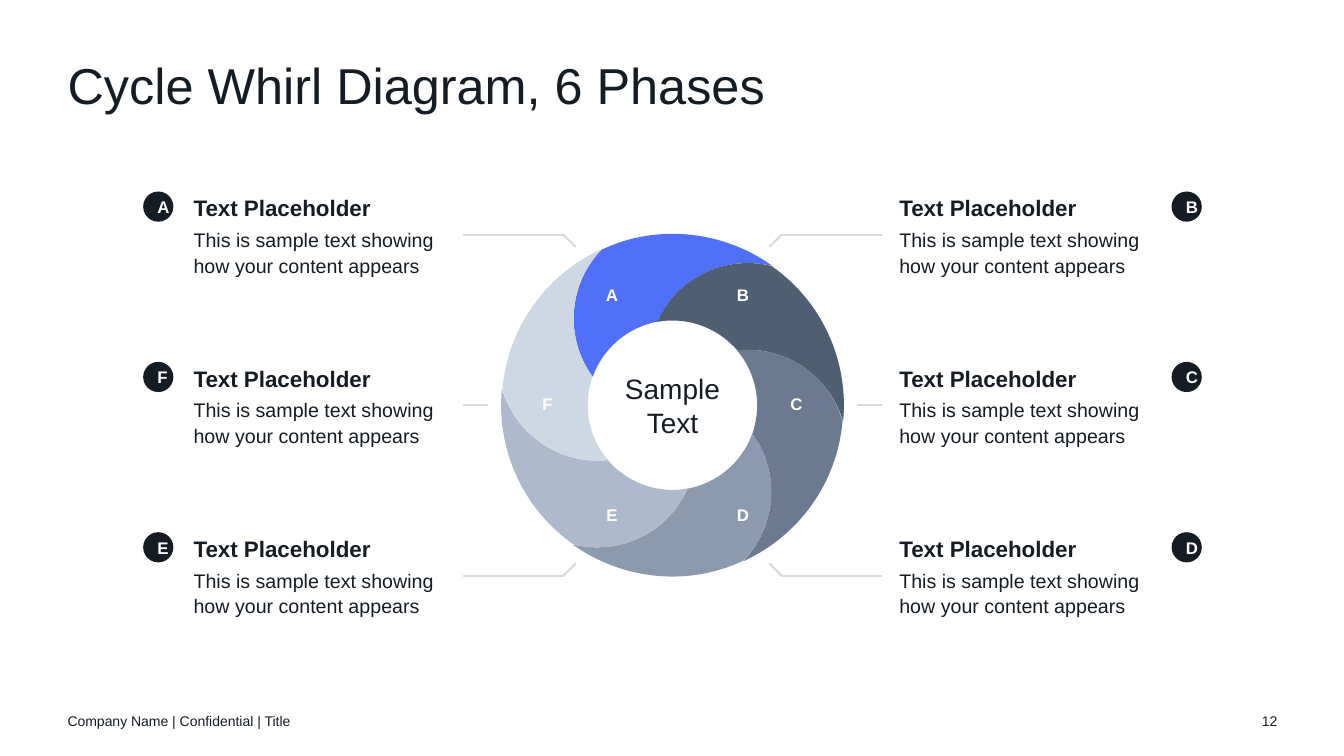
from math import ceil, cos, floor, radians, sin, tan

from pptx import Presentation
from pptx.dml.color import RGBColor
from pptx.enum.shapes import MSO_CONNECTOR as Connector, MSO_SHAPE as Shape
from pptx.enum.text import MSO_ANCHOR as Anchor, PP_ALIGN as Align
from pptx.oxml.ns import qn
from pptx.util import Inches, Pt

TITLE = "Cycle Whirl Diagram, 6 Phases"
FOOTER = "Company Name | Confidential | Title"
PAGE_NUMBER = "12"
CENTER_TEXT = "Sample Text"
HEADING = "Text Placeholder"
BODY = "This is sample text showing how your content appears"
FONT = "Arial"
COLORS = {
    "ink": "151C23", "white": "FFFFFF", "line": "D9D9D9",
    "A": "5070FA", "B": "4E5E73", "C": "6B7A90",
    "D": "8C9AB0", "E": "AFB9CD", "F": "CED8E4",
}
PHASES = [
    ("A", "left", 0, (6.07, 2.92)),
    ("B", "right", 0, (7.37, 2.92)),
    ("C", "right", 1, (7.9, 4.01)),
    ("D", "right", 2, (7.37, 5.11)),
    ("E", "left", 2, (6.07, 5.11)),
    ("F", "left", 1, (5.43, 4.01)),
]
SIDES = {
    "left": {"badge": 1.42, "text": 1.92, "line": 4.59, "inward": 1},
    "right": {"badge": 11.62, "text": 8.92, "line": 8.75, "inward": -1},
}
FIRST_ROW, ROW_PITCH, LINE_DROP = 1.9, 1.69, 0.43
BADGE = 0.3
CENTER = (6.67, 4.02)
OUTER_RADIUS, HOLE_RADIUS = 1.7, 0.84
CURVE_RADIUS, CURVE_OFFSET = 0.98, 0.86


def color(name):
    return RGBColor.from_string(COLORS[name])


def write(shape, text, size, bold=False, fill="ink", align=Align.LEFT,
          anchor=Anchor.MIDDLE, inset=0, spacing=None, after=None,
          append=False):
    frame = shape.text_frame
    frame.word_wrap = True
    frame.vertical_anchor = anchor
    if inset is not None:
        frame.margin_left = frame.margin_right = Inches(inset)
        frame.margin_top = frame.margin_bottom = Inches(inset)
    paragraph = frame.add_paragraph() if append else frame.paragraphs[0]
    paragraph.alignment = align
    paragraph.line_spacing = spacing
    paragraph.space_after = None if after is None else Pt(after)
    run = paragraph.add_run()
    run.text = text
    run.font.name = FONT
    run.font.size = Pt(size)
    run.font.bold = bold
    run.font.color.rgb = color(fill)


def add_text(slide, box, text, size, **style):
    shape = slide.shapes.add_textbox(*map(Inches, box))
    write(shape, text, size, **style)
    return shape


def fill_plain(shape, name):
    shape.shadow.inherit = False
    shape.fill.solid()
    shape.fill.fore_color.rgb = color(name)
    shape.line.fill.background()


def polar(center, radius, angle):
    return (center[0] + radius * cos(radians(angle)),
            center[1] + radius * sin(radians(angle)))


def arc(center, radius, start, end):
    low, high = sorted((start, end))
    quarters = [90 * n for n in range(floor(low / 90) + 1, ceil(high / 90))]
    stops = sorted([low, *quarters, high], reverse=start > end)
    points = []
    for first, last in zip(stops, stops[1:]):
        reach = radius * 4 / 3 * tan(radians(last - first) / 4)
        points += [
            polar(polar(center, radius, first), reach, first + 90),
            polar(polar(center, radius, last), -reach, last + 90),
            polar(center, radius, last),
        ]
    return points


def bend_segments(shape):
    lines = list(shape._element.iter(qn("a:lnTo")))
    for index in range(0, len(lines), 3):
        trio = lines[index:index + 3]
        curve = trio[0].makeelement(qn("a:cubicBezTo"), {})
        trio[0].addprevious(curve)
        for line in trio:
            curve.append(line[0])
            line.getparent().remove(line)


def add_blade(slide, letter, turn):
    front = polar(CENTER, CURVE_OFFSET, 270 + turn)
    back = polar(CENTER, CURVE_OFFSET, 330 + turn)
    start = polar(front, CURVE_RADIUS, 144 + turn)
    points = (
        arc(front, CURVE_RADIUS, 144 + turn, 224 + turn)
        + arc(CENTER, OUTER_RADIUS, 245.5 + turn, 305.5 + turn)
        + arc(back, CURVE_RADIUS, 284 + turn, 204 + turn)
        + arc(CENTER, HOLE_RADIUS, 259.5 + turn, 199.5 + turn)
    )
    builder = slide.shapes.build_freeform(*map(Inches, start))
    builder.add_line_segments(
        [tuple(map(Inches, point)) for point in points], close=True)
    blade = builder.convert_to_shape()
    bend_segments(blade)
    fill_plain(blade, letter)


def add_line(slide, start, end):
    line = slide.shapes.add_connector(
        Connector.STRAIGHT, *map(Inches, (*start, *end)))
    line.line.color.rgb = color("line")
    line.line.width = Pt(1.5)
    properties = line._element.spPr
    properties.append(properties.makeelement(qn("a:effectLst"), {}))


def add_leader(slide, side, row, y):
    x, inward = side["line"], side["inward"]
    if row == 1:
        add_line(slide, (x, y), (x + 0.25 * inward, y))
        return
    bend = (x + inward, y)
    add_line(slide, (x, y), bend)
    add_line(slide, bend, (bend[0] + 0.12 * inward, y + 0.12 * (1 - row)))


def add_label(slide, letter, side, row):
    top = FIRST_ROW + row * ROW_PITCH
    add_leader(slide, side, row, top + LINE_DROP)
    label = add_text(slide, (side["text"], top, 2.5, 0.85), HEADING, 16,
                     bold=True, spacing=1.1, after=3)
    write(label, BODY, 14, spacing=1.1, after=3, append=True)
    badge = slide.shapes.add_shape(
        Shape.OVAL, *map(Inches, (side["badge"], top, BADGE, BADGE)))
    fill_plain(badge, "ink")
    write(badge, letter, 12, bold=True, fill="white", align=Align.CENTER,
          inset=None)


def main():
    presentation = Presentation()
    presentation.slide_width = Inches(13.33)
    presentation.slide_height = Inches(7.5)
    slide = presentation.slides.add_slide(presentation.slide_layouts[5])

    title = slide.shapes.title
    title.left, title.top, title.width, title.height = map(
        Inches, (0.67, 0.6, 12, 0.6))
    write(title, TITLE, 36, spacing=0.9, anchor=Anchor.TOP)
    add_text(slide, (0.67, 6.95, 4.5, 0.4), FOOTER, 10)
    add_text(slide, (12.17, 6.95, 0.5, 0.4), PAGE_NUMBER, 10,
             align=Align.RIGHT)

    for index, (letter, *_) in enumerate(PHASES):
        add_blade(slide, letter, 60 * index)
    for letter, side, row, (x, y) in PHASES:
        add_text(slide, (x - 0.15, y - 0.15, 0.3, 0.3), letter, 12,
                 bold=True, fill="white", align=Align.CENTER)
        add_label(slide, letter, SIDES[side], row)
    add_text(slide, (CENTER[0] - 0.6, CENTER[1] - 0.6, 1.2, 1.2),
             CENTER_TEXT, 20, align=Align.CENTER)

    presentation.save("out.pptx")


if __name__ == "__main__":
    main()
